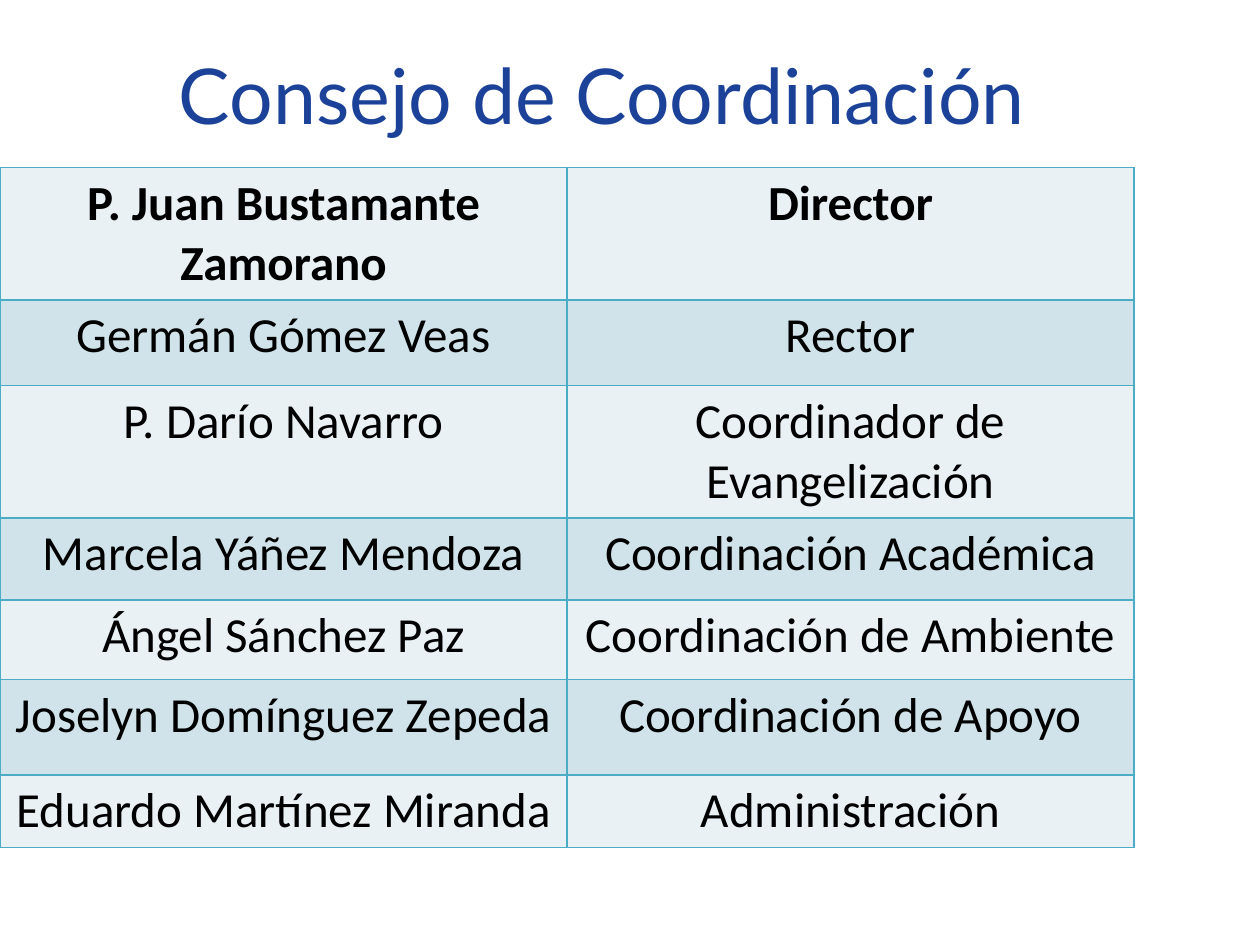
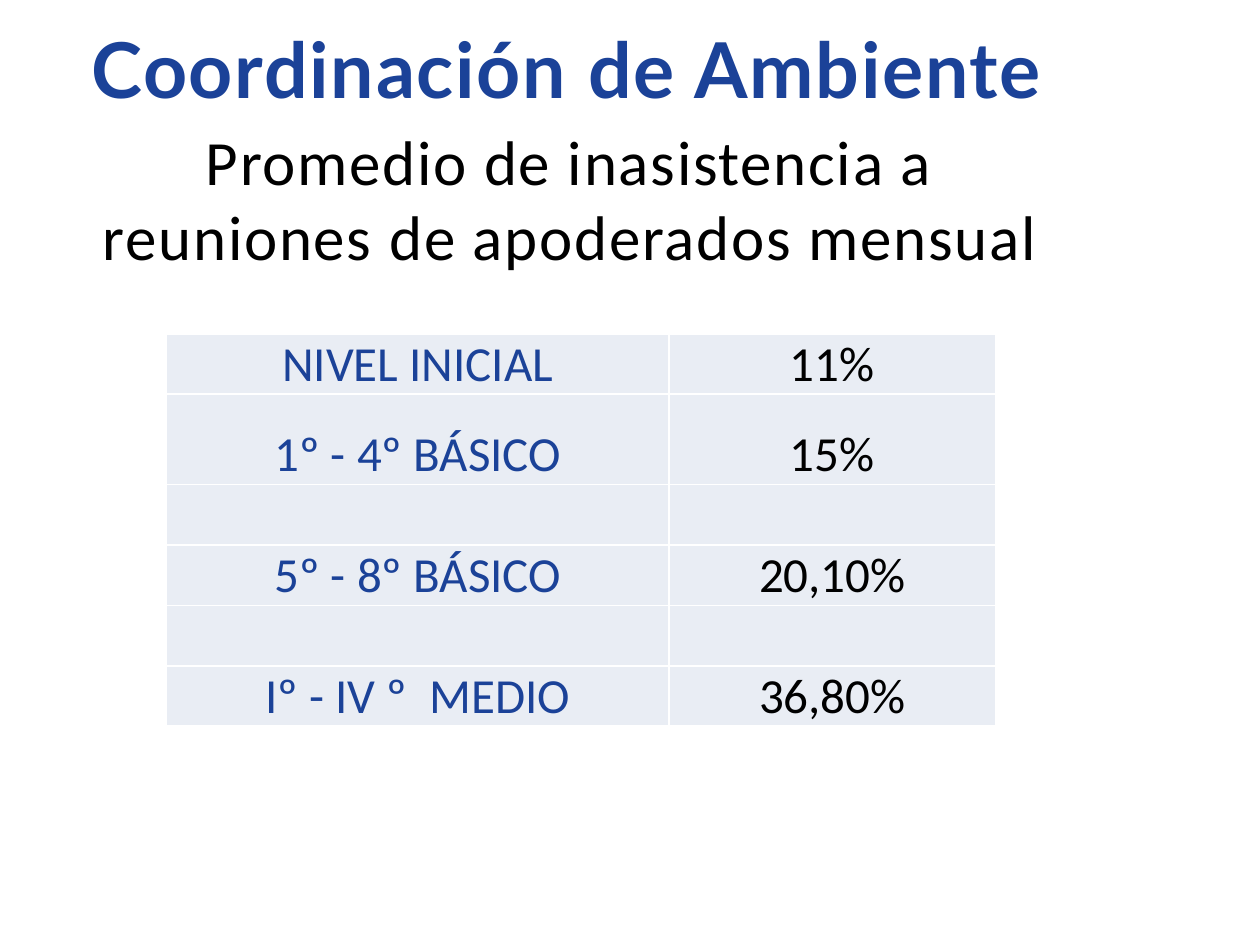
"""Build two slides: the coordination council and the meeting absence averages."""
from dataclasses import dataclass

from lxml import etree
from pptx import Presentation
from pptx.dml.color import RGBColor
from pptx.enum.text import MSO_ANCHOR, MSO_AUTO_SIZE, PP_ALIGN
from pptx.oxml.ns import qn
from pptx.util import Inches, Pt

CENTER = PP_ALIGN.CENTER
TOP, BOTTOM = MSO_ANCHOR.TOP, MSO_ANCHOR.BOTTOM
NO_FIT, GROW = MSO_AUTO_SIZE.NONE, MSO_AUTO_SIZE.SHAPE_TO_FIT_TEXT
TITLE_ONLY = 5


@dataclass(frozen=True)
class Theme:
    blue: str = "1B4298"
    black: str = "000000"
    teal: str = "4BACC6"
    white: str = "FFFFFF"
    light_band: str = "E9F1F5"
    dark_band: str = "D0E3EA"
    plain_band: str = "E9EDF4"
    title_font: str = "Lato"
    body_font: str = "Calibri"
    title_size: int = 44
    subtitle_size: int = 36
    cell_size: int = 28


theme = Theme()


def write(frame, text, font, size, color, bold=False, spacing=0):
    para = frame.paragraphs[0]
    para.alignment = CENTER
    span = para.add_run()
    span.text = text
    span.font.name = font
    span.font.size = Pt(size)
    span.font.bold = bold
    span.font.color.rgb = RGBColor.from_string(color)
    if spacing:
        span._r.get_or_add_rPr().set("spc", str(spacing * 100))


def paint(cell, fill, border):
    properties = cell._tc.get_or_add_tcPr()
    for side in ("lnL", "lnR", "lnT", "lnB"):
        line = etree.SubElement(properties, qn(f"a:{side}"), w=str(Pt(1)))
        solid = etree.SubElement(line, qn("a:solidFill"))
        etree.SubElement(solid, qn("a:srgbClr"), val=border)
    cell.fill.solid()
    cell.fill.fore_color.rgb = RGBColor.from_string(fill)


deck = Presentation()
deck.slide_width, deck.slide_height = Inches(10), Inches(7.5)
width, height = deck.slide_width, deck.slide_height

titles = [
    ("Consejo de Coordinación", 0.28, 0.3, False, 0),
    ("Coordinación de Ambiente", 0, 0.09, True, 1),
]
for text, left, top, bold, spacing in titles:
    page = deck.slides.add_slide(deck.slide_layouts[TITLE_ONLY])
    title = page.shapes.title
    title.left, title.top = Inches(left), Inches(top)
    title.width, title.height = int(width * 0.9), height // 6
    frame = title.text_frame
    frame.auto_size = NO_FIT
    frame.vertical_anchor = TOP
    frame.margin_top = Inches(0.08)
    write(frame, text, theme.title_font, theme.title_size, theme.blue, bold, spacing)

council_page, absence_page = deck.slides

council = [
    ("P. Juan Bustamante Zamorano", "Director", 1.05),
    ("Germán Gómez Veas", "Rector", 0.68),
    ("P. Darío Navarro", "Coordinador de Evangelización", 1.05),
    ("Marcela Yáñez Mendoza", "Coordinación Académica", 0.65),
    ("Ángel Sánchez Paz", "Coordinación de Ambiente", 0.63),
    ("Joselyn Domínguez Zepeda", "Coordinación de Apoyo", 0.76),
    ("Eduardo Martínez Miranda", "Administración", 0.57),
]
council_table = council_page.shapes.add_table(
    len(council), 2, 0, Inches(1.33), int(width * 0.9), Inches(5.39)).table
for row, (person, role, row_height) in enumerate(council):
    council_table.rows[row].height = Inches(row_height)
    for column, text in enumerate((person, role)):
        cell = council_table.cell(row, column)
        paint(cell, theme.dark_band if row % 2 else theme.light_band, theme.teal)
        write(cell.text_frame, text, theme.body_font, theme.cell_size,
              theme.black, bold=row == 0)

box = absence_page.shapes.add_textbox(
    Inches(0.56), Inches(0.92), Inches(7.93), Inches(1.31))
box.text_frame.word_wrap = True
box.text_frame.auto_size = GROW
write(box.text_frame, "Promedio de inasistencia a reuniones de apoderados mensual",
      theme.body_font, theme.subtitle_size, theme.black, spacing=1)

absences = [
    ("NIVEL INICIAL", "11%", 0.47),
    ("1º - 4º BÁSICO", "15%", 0.72),
    ("", "", 0.48),
    ("5º - 8º BÁSICO", "20,10%", 0.47),
    ("", "", 0.48),
    ("Iº - IV º  MEDIO", "36,80%", 0.47),
]
absence_table = absence_page.shapes.add_table(
    len(absences), 2, Inches(1.32), Inches(2.65), Inches(6.58), Inches(3.09)).table
for column, column_width in enumerate((3.99, 2.59)):
    absence_table.columns[column].width = Inches(column_width)
for row, (level, share, row_height) in enumerate(absences):
    absence_table.rows[row].height = Inches(row_height)
    for column, (text, color) in enumerate(((level, theme.blue), (share, theme.black))):
        cell = absence_table.cell(row, column)
        paint(cell, theme.plain_band, theme.white)
        cell.vertical_anchor = BOTTOM
        cell.margin_left = cell.margin_right = cell.margin_top = Inches(0.01)
        cell.margin_bottom = 0
        if text:
            write(cell.text_frame, text, theme.body_font, theme.cell_size, color)

deck.save("out.pptx")
